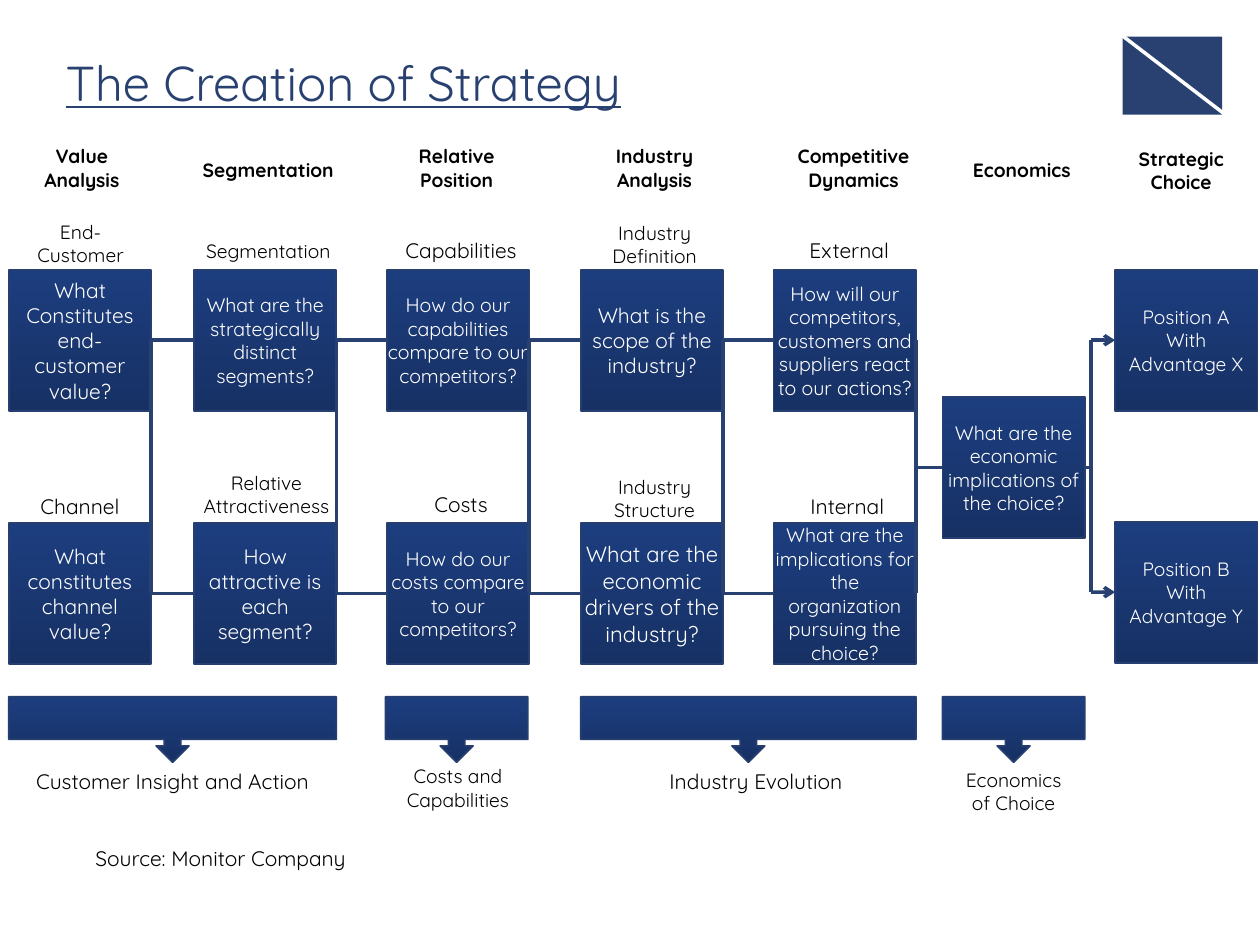
from dataclasses import dataclass

from lxml.etree import SubElement
from pptx import Presentation
from pptx.dml.color import RGBColor
from pptx.enum.shapes import MSO_CONNECTOR as Conn, MSO_SHAPE as Preset
from pptx.enum.text import MSO_ANCHOR as Anchor, MSO_AUTO_SIZE as Fit, PP_ALIGN as Align
from pptx.oxml.ns import qn
from pptx.util import Inches, Pt

NAVY, EDGE, DARK, LIGHT = "294171", "263F70", "173165", "1C3D7E"
WHITE, BLACK = "FFFFFF", "000000"
BOX_W, BOX_H = 1.13, 1.12
TOP, BOTTOM = 2.14, 4.15
LEFT_SITE, RIGHT_SITE = 1, 3


@dataclass
class Question:
    text: str
    size: float = 11.2
    inset_x: float = 0
    inset_y: float = 0.05


@dataclass
class Stage:
    left: float
    upper: Question
    lower: Question


@dataclass
class Label:
    text: str
    left: float
    top: float
    width: float
    height: float = 0.47
    size: float = 11
    bold: bool = False
    wrap: bool = True
    align: Align = Align.CENTER


@dataclass
class Theme:
    left: float
    width: float


STAGES = [
    Stage(0.07, Question("What Constitutes end-customer value?", 12, 0.1),
          Question("What constitutes channel value?", 12, 0.1)),
    Stage(1.54, Question("What are the strategically distinct segments?", inset_x=0.1),
          Question("How attractive is each segment?", 12, 0.1)),
    Stage(3.07, Question("How do our capabilities compare to our competitors?"),
          Question("How do our costs compare to our competitors?")),
    Stage(4.61, Question("What is the scope of the industry?", 12),
          Question("What are the economic drivers of the industry?", 12.6)),
    Stage(6.14, Question("How will our competitors, customers and suppliers react to our actions?",
                         inset_y=0.02),
          Question("What are the implications for the organization pursuing the choice?")),
]

HEADINGS = [
    Label("Value Analysis", 0.05, 1.1, 1.2, bold=True),
    Label("Segmentation", 1.5, 1.21, 1.26, 0.29, bold=True, wrap=False),
    Label("Relative Position", 3.09, 1.1, 1.07, bold=True),
    Label("Industry Analysis", 4.69, 1.1, 1.01, bold=True),
    Label("Competitive Dynamics", 6.2, 1.1, 1.15, bold=True),
    Label("Economics", 7.6, 1.21, 1.02, 0.29, bold=True, wrap=False),
    Label("Strategic Choice", 8.76, 1.12, 1.23, bold=True),
]

CAPTIONS = [
    Label("End-Customer", 0.07, 1.7, 1.14),
    Label("Segmentation", 1.5, 1.85, 1.26, 0.29, wrap=False),
    Label("Capabilities", 3.08, 1.84, 1.16, 0.3, 12, wrap=False),
    Label("Industry Definition", 4.69, 1.71, 1.01),
    Label("External", 6.32, 1.84, 0.84, 0.3, 12, wrap=False),
    Label("Channel", 0.07, 3.87, 1.13, 0.3, 12),
    Label("Relative Attractiveness", 1.36, 3.69, 1.51),
    Label("Costs", 3.34, 3.85, 0.64, 0.3, 12, wrap=False),
    Label("Industry Structure", 4.69, 3.72, 1.01),
    Label("Internal", 6.32, 3.87, 0.81, 0.3, 12, wrap=False),
]

THEMES = [Theme(0.07, 2.6), Theme(3.06, BOX_W), Theme(4.61, 2.66), Theme(7.48, BOX_W)]
THEME_LABELS = [
    Label("Customer Insight and Action", 0.07, 6.05, 2.6, 0.3, 12),
    Label("Costs and Capabilities", 3.07, 6.02, BOX_W),
    Label("Industry Evolution", 4.7, 6.05, 2.6, 0.3, 12),
    Label("Economics of Choice", 7.48, 6.05, BOX_W),
]
SOURCE = Label("Source: Monitor Company", 0.66, 6.66, 2.4, 0.5, 12, wrap=False, align=Align.LEFT)


def rgb(value: str) -> RGBColor:
    return RGBColor.from_string(value)


def set_attributes(target, values: dict) -> None:
    for name, value in values.items():
        setattr(target, name, value)


def write(frame, text: str, size: float, color: str, align=Align.CENTER, **font_values) -> None:
    frame.text = text
    for paragraph in frame.paragraphs:
        paragraph.alignment = align
        set_attributes(paragraph.font, {"name": "Quicksand", "size": Pt(size), **font_values})
        paragraph.font.color.rgb = rgb(color)


def add_panel(slide, preset, left: float, top: float, width: float, height: float):
    panel = slide.shapes.add_shape(preset, Inches(left), Inches(top), Inches(width), Inches(height))
    panel.shadow.inherit = False
    panel.fill.gradient()
    panel.fill.gradient_angle = 90
    for stop, color in zip(panel.fill.gradient_stops, (DARK, LIGHT)):
        stop.color.rgb = rgb(color)
    panel.line.color.rgb = rgb(EDGE)
    panel.line.width = Pt(1)
    return panel


def add_question(slide, question: Question, left: float, top: float):
    box = add_panel(slide, Preset.RECTANGLE, left, top, BOX_W, BOX_H)
    x, y = Inches(question.inset_x), Inches(question.inset_y)
    set_attributes(box.text_frame, {
        "word_wrap": True, "vertical_anchor": Anchor.MIDDLE,
        "margin_left": x, "margin_right": x, "margin_top": y, "margin_bottom": y})
    write(box.text_frame, question.text, question.size, WHITE)
    return box


def add_label(slide, label: Label) -> None:
    box = slide.shapes.add_textbox(Inches(label.left), Inches(label.top),
                                   Inches(label.width), Inches(label.height))
    set_attributes(box.text_frame, {"word_wrap": label.wrap, "auto_size": Fit.SHAPE_TO_FIT_TEXT})
    write(box.text_frame, label.text, label.size, BLACK, label.align, bold=label.bold)


def add_line(slide, start=(0, 0), end=(0, 0), begin_at=None, end_at=None,
             color: str = NAVY, arrow: bool = False) -> None:
    """Points are (x, y) in inches; begin_at and end_at are (box, site)."""
    line = slide.shapes.add_connector(Conn.STRAIGHT, *(Inches(v) for v in (*start, *end)))
    if begin_at:
        line.begin_connect(*begin_at)
    if end_at:
        line.end_connect(*end_at)
    line.line.color.rgb = rgb(color)
    line.line.width = Pt(2)
    if arrow:
        SubElement(line.line._get_or_add_ln(), qn("a:tailEnd"), type="arrow")
    SubElement(line._element.spPr, qn("a:effectLst"))


def main() -> None:
    deck = Presentation()
    deck.slide_width, deck.slide_height = Inches(10), Inches(7.5)
    slide = deck.slides.add_slide(deck.slide_layouts[5])

    # Title and corner ornament
    title = slide.shapes.title
    set_attributes(title, {"left": Inches(0.42), "top": Inches(0.37),
                           "width": Inches(6.71), "height": Inches(0.59)})
    set_attributes(title.text_frame, {"word_wrap": True, "vertical_anchor": Anchor.TOP})
    write(title.text_frame, "The Creation of Strategy", 28, NAVY, Align.LEFT, underline=True)
    ornament = slide.shapes.add_shape(Preset.RECTANGLE, Inches(8.91), Inches(0.29),
                                      Inches(0.79), Inches(0.62))
    ornament.shadow.inherit = False
    ornament.fill.solid()
    ornament.fill.fore_color.rgb = rgb(NAVY)
    ornament.line.fill.background()
    add_line(slide, (8.89, 0.27), (9.79, 0.96), color=WHITE)

    # Question boxes and final positions
    uppers = [add_question(slide, stage.upper, stage.left, TOP) for stage in STAGES]
    lowers = [add_question(slide, stage.lower, stage.left, BOTTOM) for stage in STAGES]
    economics = add_question(
        slide, Question("What are the economic implications of the choice?"), 7.48, 3.15)
    positions = [add_question(slide, Question(f"Position {p}\nWith\nAdvantage {a}", 11), 8.85, top)
                 for p, a, top in (("A", "X", TOP), ("B", "Y", 4.14))]

    # Links within and between stages
    for upper, lower in zip(uppers, lowers):
        add_line(slide, begin_at=(upper, RIGHT_SITE), end_at=(lower, RIGHT_SITE))
    for row in (uppers, lowers):
        for box, following in zip(row, row[1:]):
            add_line(slide, begin_at=(box, RIGHT_SITE), end_at=(following, LEFT_SITE))

    # Links through economics to the choice
    trunk, middle = 8.66, 3.71
    add_line(slide, start=(7.27, middle), end_at=(economics, LEFT_SITE))
    add_line(slide, begin_at=(economics, RIGHT_SITE), end=(trunk, middle))
    add_line(slide, (trunk, 2.7), (trunk, 4.7))
    for position, y in zip(positions, (2.7, 4.7)):
        add_line(slide, start=(trunk, y), end_at=(position, LEFT_SITE), arrow=True)

    # Themes below the stages, and all labels
    for theme in THEMES:
        add_panel(slide, Preset.DOWN_ARROW_CALLOUT, theme.left, 5.53, theme.width, 0.52)
    for label in (*HEADINGS, *CAPTIONS, *THEME_LABELS, SOURCE):
        add_label(slide, label)

    deck.save("out.pptx")


if __name__ == "__main__":
    main()
